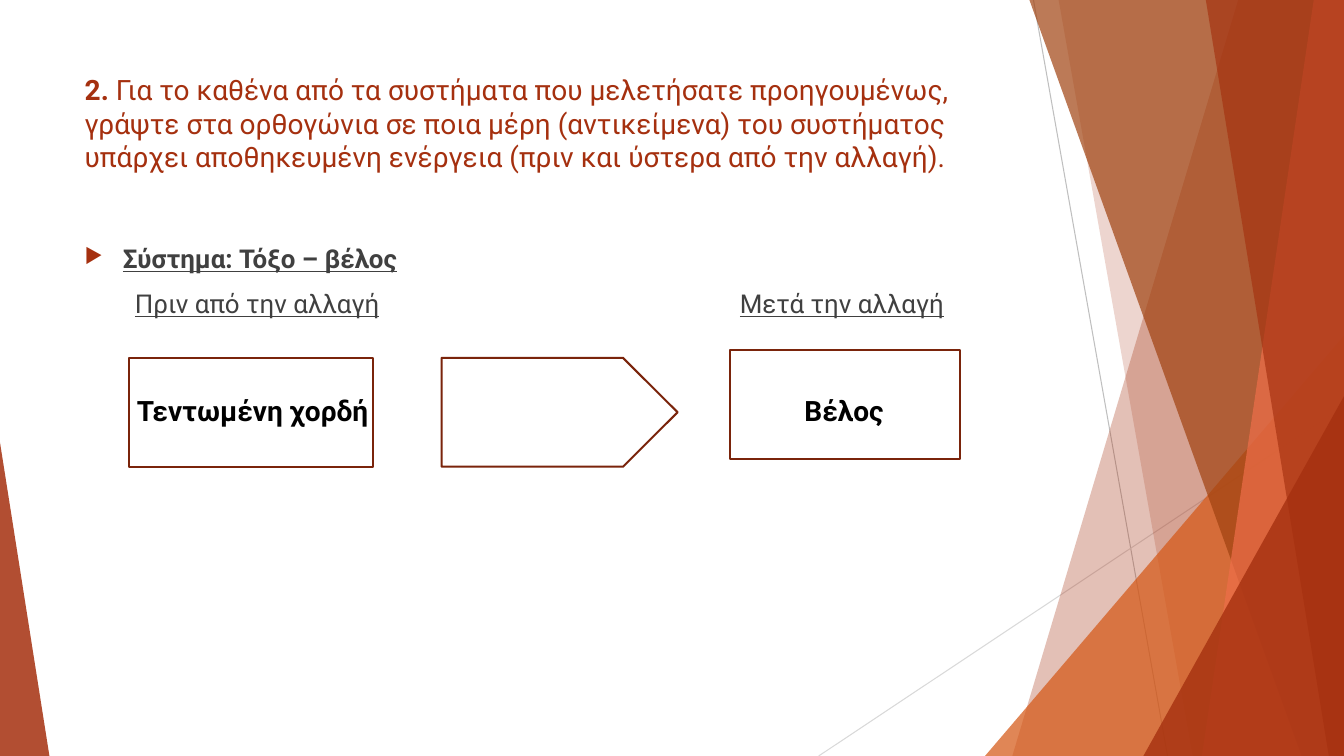
"""Build a slide on where energy is stored in a bow-and-arrow system."""
from lxml.etree import SubElement
from pptx import Presentation
from pptx.dml.color import RGBColor
from pptx.enum.shapes import MSO_CONNECTOR, MSO_SHAPE
from pptx.enum.text import MSO_ANCHOR, MSO_AUTO_SIZE, PP_ALIGN
from pptx.oxml.ns import qn
from pptx.util import Inches, Pt

RUST = RGBColor(0xA5, 0x30, 0x0F)
ORANGE = RGBColor(0xD5, 0x58, 0x16)
BROWN = RGBColor(0xA0, 0x42, 0x10)
CORAL = RGBColor(0xEE, 0x6E, 0x4A)
OUTLINE = RGBColor(0x7A, 0x24, 0x0B)
GREY = RGBColor(0x40, 0x40, 0x40)
MID_GREY = RGBColor(0xBF, 0xBF, 0xBF)
PALE_GREY = RGBColor(0xD9, 0xD9, 0xD9)
BLACK = RGBColor(0, 0, 0)
WHITE = RGBColor(0xFF, 0xFF, 0xFF)
WIDTH, HEIGHT = 13.33, 7.5


def write(paragraph, text, size=20, color=BLACK, bold=False, underline=False):
    run = paragraph.add_run()
    run.text = text
    run.font.name = "Roboto"
    run.font.size = Pt(size)
    run.font.bold = bold
    run.font.underline = underline
    run.font.color.rgb = color


def paint(facet, color, opacity):
    facet.shadow.inherit = False
    facet.line.fill.background()
    facet.fill.solid()
    facet.fill.fore_color.rgb = color
    tint = facet.fill._xPr.find(qn("a:solidFill"))[0]
    SubElement(tint, qn("a:alpha"), val=str(opacity * 1000))


deck = Presentation()
deck.slide_width, deck.slide_height = Inches(WIDTH), Inches(HEIGHT)
slide = deck.slides.add_slide(deck.slide_layouts[5])
shapes = slide.shapes

for *ends, color in [(10.25, 0, 11.58, HEIGHT, MID_GREY),
                     (WIDTH, 4.03, 8.12, HEIGHT, PALE_GREY)]:
    ray = shapes.add_connector(MSO_CONNECTOR.STRAIGHT, *map(Inches, ends))
    ray.line.color.rgb = color
    ray.line.width = Pt(0.75)
    SubElement(ray._element.spPr, qn("a:effectLst"))

# Each facet: left edge at the top, left edge at the bottom (or triangle box), colour, opacity
facets = [
    ((12.28, 10.04), RUST, 30),
    ((10.5, 11.83), RUST, 20),
    ((9.77, 3.33, 3.56, 1), ORANGE, 72),
    ((10.21, 12.91), BROWN, 70),
    ((13.03, 11.92), CORAL, 70),
    ((11.96, 13.18), RUST, 65),
    ((11.34, 3.93, 1.99, 1), RUST, 80),
    ((0, 4.39, 0.49, 0), RUST, 85),
]
for edge, color, opacity in facets:
    if len(edge) == 2:
        top_x, bottom_x = edge
        outline = shapes.build_freeform(Inches(top_x), 0)
        corners = [(WIDTH, 0), (WIDTH, HEIGHT), (bottom_x, HEIGHT)]
        outline.add_line_segments([(Inches(x), Inches(y)) for x, y in corners])
        facet = outline.convert_to_shape()
    else:
        left, top, width, peak = edge
        facet = shapes.add_shape(MSO_SHAPE.ISOSCELES_TRIANGLE, Inches(left),
                                 Inches(top), Inches(width), Inches(HEIGHT - top))
        facet.adjustments[0] = peak
    paint(facet, color, opacity)

question = shapes.title
question.left, question.top = Inches(0.74), Inches(0.67)
question.width, question.height = Inches(9.4), Inches(1.44)
question.text_frame.word_wrap = True
question.text_frame.auto_size = MSO_AUTO_SIZE.NONE
question.text_frame.vertical_anchor = MSO_ANCHOR.TOP
wording = question.text_frame.paragraphs[0]
wording.alignment = PP_ALIGN.LEFT
write(wording, "2. ", color=RUST, bold=True)
write(wording, "Για το καθένα από τα συστήματα που μελετήσατε προηγουμένως, "
      "γράψτε στα ορθογώνια σε ποια μέρη (αντικείμενα) του συστήματος "
      "υπάρχει αποθηκευμένη ενέργεια (πριν και ύστερα από την αλλαγή).", color=RUST)

system = shapes.add_textbox(Inches(0.74), Inches(2.36), Inches(9.4), Inches(0.9)).text_frame
system.word_wrap = True
heading, stages = system.paragraphs[0], system.add_paragraph()
heading.space_before = stages.space_before = Pt(10)
write(heading, "Σύστημα: Τόξο – βέλος", 18.5, GREY, bold=True, underline=True)
bullet = heading._p.get_or_add_pPr()
bullet.set("marL", str(Inches(0.38)))
bullet.set("indent", str(Inches(-0.38)))
SubElement(SubElement(bullet, qn("a:buClr")), qn("a:srgbClr"), val=str(RUST))
SubElement(bullet, qn("a:buSzPct"), val="80000")
SubElement(bullet, qn("a:buChar"), char="▶")

stops = SubElement(stages._p.get_or_add_pPr(), qn("a:tabLst"))
for stage, position in [("Πριν από την αλλαγή", 0.5), ("Μετά την αλλαγή", 6.5)]:
    SubElement(stops, qn("a:tab"), pos=str(Inches(position)), algn="l")
    write(stages, "\t", 18.5, GREY)
    write(stages, stage, 18.5, GREY, underline=True)

for kind, left, top, width in [(MSO_SHAPE.RECTANGLE, 1.28, 3.55, 2.42),
                               (MSO_SHAPE.PENTAGON, 4.38, 3.55, 2.34),
                               (MSO_SHAPE.RECTANGLE, 7.24, 3.47, 2.28)]:
    frame = shapes.add_shape(kind, Inches(left), Inches(top), Inches(width), Inches(1.08))
    frame.shadow.inherit = False
    frame.fill.solid()
    frame.fill.fore_color.rgb = WHITE
    frame.line.color.rgb = OUTLINE
    frame.line.width = Pt(1.5)

for store, left, width in [("Τεντωμένη χορδή", 1.26, 2.54), ("Βέλος", 7.88, 0.99)]:
    answer = shapes.add_textbox(Inches(left), Inches(3.85), Inches(width), Inches(0.44)).text_frame
    answer.word_wrap = True
    answer.auto_size = MSO_AUTO_SIZE.SHAPE_TO_FIT_TEXT
    write(answer.paragraphs[0], store, bold=True)

deck.save("out.pptx")
